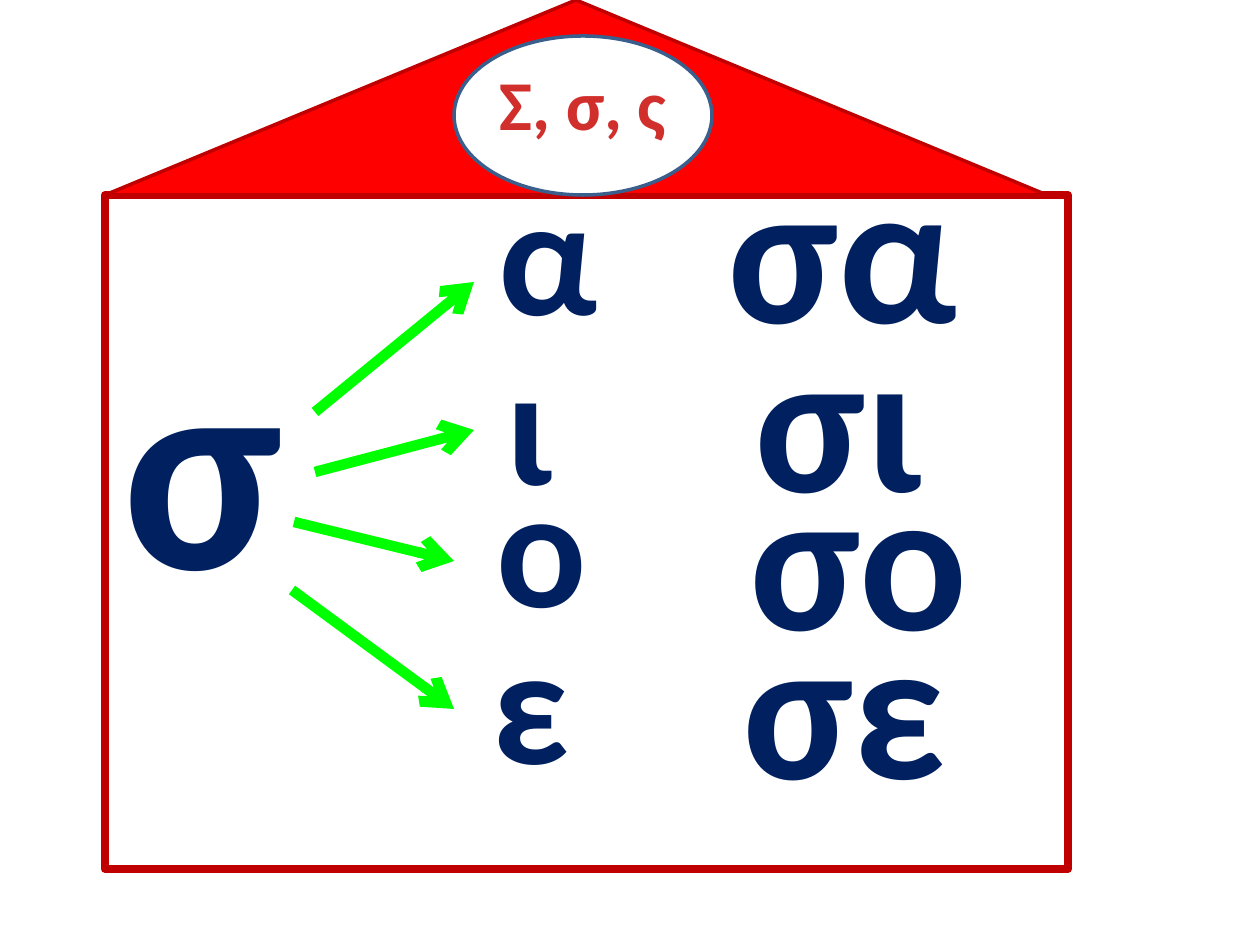
from dataclasses import dataclass

from lxml.etree import SubElement
from pptx import Presentation
from pptx.dml.color import RGBColor as RGB
from pptx.enum.shapes import MSO_CONNECTOR as Connector, MSO_SHAPE as Shape
from pptx.enum.text import MSO_AUTO_SIZE as AutoSize, PP_ALIGN as Align
from pptx.oxml.ns import qn
from pptx.util import Emu, Pt

PX_PER_INCH = 126


def px(n):
    return Emu(round(n * 914400 / PX_PER_INCH))


@dataclass(frozen=True)
class Theme:
    font: str = "Calibri"
    letter: RGB = RGB(0x00, 0x20, 0x60)
    title: RGB = RGB(0xD0, 0x2F, 0x2C)
    arrow: RGB = RGB(0x00, 0xFF, 0x00)
    wall: RGB = RGB(0xC0, 0x00, 0x00)
    roof: RGB = RGB(0xFF, 0x00, 0x00)
    window: RGB = RGB(0xFF, 0xFF, 0xFF)
    window_edge: RGB = RGB(0x3A, 0x5F, 0x8C)
    consonant_size: int = 166
    syllable_size: int = 115
    vowel_size: int = 96
    title_size: int = 40
    arrow_width: float = 6
    wall_width: float = 4.5
    edge_width: float = 2


class Board:
    def __init__(self, s, theme):
        self.s = s
        self.theme = theme

    def text(self, text, box, size, color):
        tf = self.s.shapes.add_textbox(*map(px, box)).text_frame
        tf.word_wrap = False
        tf.auto_size = AutoSize.SHAPE_TO_FIT_TEXT
        p = tf.paragraphs[0]
        p.text = text
        p.alignment = Align.CENTER
        p.font.name = self.theme.font
        p.font.size = Pt(size)
        p.font.bold = True
        p.font.color.rgb = color

    def arrow(self, start, end):
        c = self.s.shapes.add_connector(
            Connector.STRAIGHT, *map(px, start + end))
        c.line.color.rgb = self.theme.arrow
        c.line.width = Pt(self.theme.arrow_width)
        SubElement(c.line._get_or_add_ln(), qn("a:tailEnd"), type="arrow")
        SubElement(c._element.spPr, qn("a:effectLst"))

    def shape(self, kind, box, edge, width, fill=None):
        sp = self.s.shapes.add_shape(kind, *map(px, box))
        sp.shadow.inherit = False
        if fill is None:
            sp.fill.background()
        else:
            sp.fill.solid()
            sp.fill.fore_color.rgb = fill
        sp.line.color.rgb = edge
        sp.line.width = Pt(width)


def main():
    prs = Presentation()
    prs.slide_width, prs.slide_height = px(1260), px(945)
    t = Theme()
    board = Board(prs.slides.add_slide(prs.slide_layouts[6]), t)

    board.text("σ", (84, 273, 237, 364), t.consonant_size, t.letter)
    for start, end in (
        ((315, 412), (474, 282)),
        ((315, 472), (474, 430)),
        ((294, 522), (454, 561)),
        ((292, 590), (454, 709)),
    ):
        board.arrow(start, end)

    for vowel, left, top, width in (
        ("α", 475, 141, 147),
        ("ι", 493, 311, 74),
        ("ο", 474, 433, 135),
        ("ε", 465, 590, 131),
    ):
        board.text(vowel, (left, top, width, 217), t.vowel_size, t.letter)

    for syllable, left, top, width in (
        ("σα", 684, 116, 318),
        ("σι", 726, 285, 227),
        ("σο", 708, 423, 302),
        ("σε", 696, 572, 297),
    ):
        board.text(syllable, (left, top, width, 257), t.syllable_size, t.letter)

    board.shape(Shape.RECTANGLE, (105, 195, 963, 674), t.wall, t.wall_width)
    board.shape(Shape.ISOSCELES_TRIANGLE, (105, 0, 942, 195),
                t.wall, t.edge_width, t.roof)
    board.shape(Shape.OVAL, (454, 36, 258, 159),
                t.window_edge, t.edge_width, t.window)
    board.text("Σ, σ, ς", (461, 54, 244, 97), t.title_size, t.title)

    prs.save("out.pptx")


if __name__ == "__main__":
    main()
